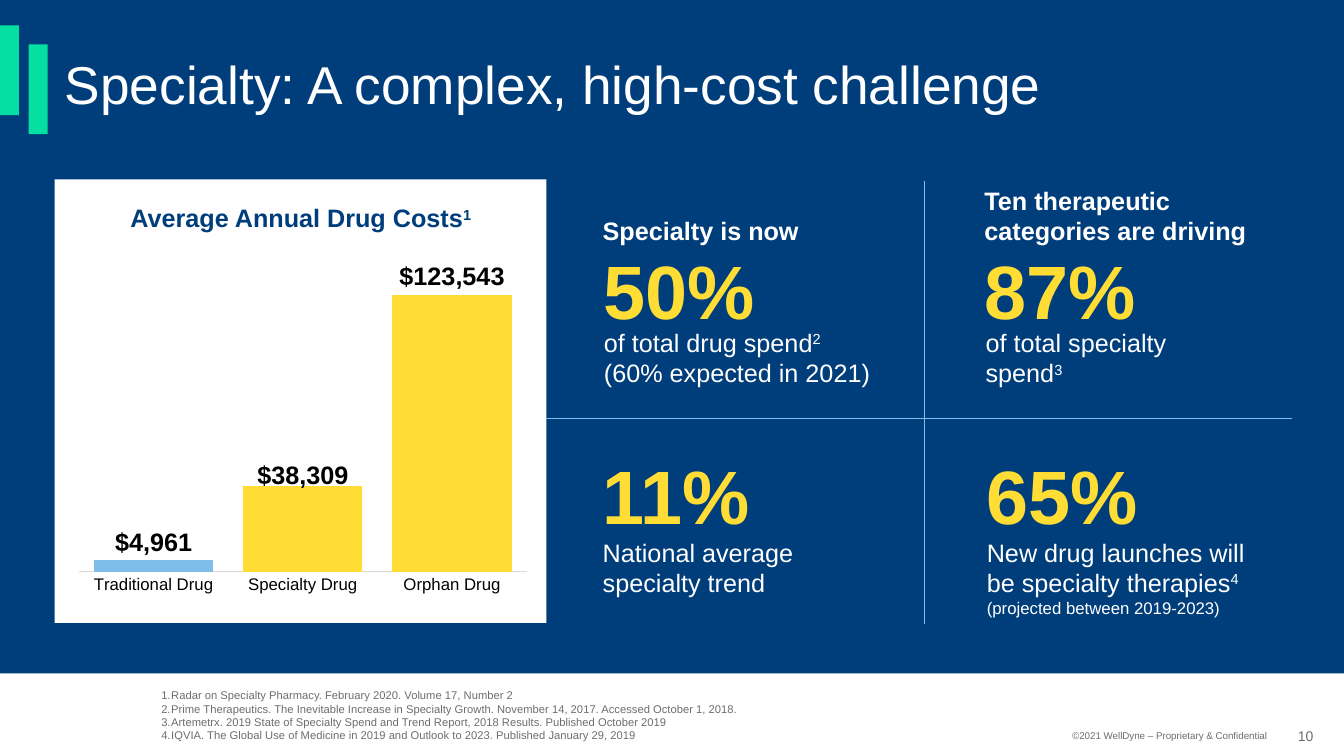
"""Build the slide on specialty drug costs."""
import dataclasses
import typing

import lxml.etree
import pptx
import pptx.chart.data
import pptx.dml.color
import pptx.enum.chart
import pptx.enum.shapes
import pptx.enum.text
import pptx.oxml
import pptx.oxml.ns
import pptx.util

Cm = pptx.util.Cm
Pt = pptx.util.Pt
Align = pptx.enum.text.PP_ALIGN
Anchor = pptx.enum.text.MSO_ANCHOR
COLORS = {"navy": "003E7B", "green": "05E0A2", "sky": "7FBEEB", "gold": "FFDD35",
          "white": "FFFFFF", "gray": "6B6E71", "black": "000000", "rule": "D9D9D9"}
MONEY = '"$"#,##0'
COSTS = {"Traditional Drug": 4961, "Specialty Drug": 38309, "Orphan Drug": 123543}
NOTES = (
    "Radar on Specialty Pharmacy. February 2020. Volume 17, Number 2",
    "Prime Therapeutics. The Inevitable Increase in Specialty Growth. "
    "November 14, 2017. Accessed October 1, 2018.",
    "Artemetrx. 2019 State of Specialty Spend and Trend Report, 2018 Results. "
    "Published October 2019",
    "IQVIA. The Global Use of Medicine in 2019 and Outlook to 2023. "
    "Published January 29, 2019",
)


@dataclasses.dataclass
class Area:
    left: float
    top: float
    width: float
    height: float

    def spans(self) -> list:
        return [Cm(n) for n in (self.left, self.top, self.width, self.height)]


@dataclasses.dataclass
class Block:
    area: Area
    color: str


@dataclasses.dataclass
class Line:
    text: str
    size: float = 18


@dataclasses.dataclass
class Label:
    area: Area
    lines: list[Line]
    color: str = "white"
    bold: bool = False
    anchor: typing.Any = Anchor.TOP
    align: typing.Any = Align.LEFT


BACK = Block(Area(0, 0, 33.87, 16.97), "navy")
BLOCKS = [
    Block(Area(0, 0.64, 0.48, 2.26), "green"),
    Block(Area(0.72, 1.12, 0.48, 2.26), "green"),
    Block(Area(1.38, 4.52, 12.39, 11.18), "white"),
]
RULES = [(23.29, 4.55, 23.29, 15.72), (32.56, 10.54, 13.77, 10.54)]
LABELS = [
    Label(Area(23.65, 18.03, 8.53, 1.02),
          [Line("©2021 WellDyne – Proprietary & Confidential", 7)],
          "gray", anchor=Anchor.MIDDLE, align=Align.RIGHT),
    Label(Area(32.46, 18.03, 1.14, 1.02), [Line("10", 10)], "gray", anchor=Anchor.MIDDLE),
    Label(Area(1.38, 4.67, 12.4, 1.63), [Line("Average Annual Drug Costs^1")],
          "navy", True, Anchor.MIDDLE, Align.CENTER),
    Label(Area(14.94, 5.3, 7.59, 1.02), [Line("Specialty is now")],
          bold=True, anchor=Anchor.BOTTOM),
    Label(Area(24.56, 4.52, 7.59, 1.8), [Line("Ten therapeutic categories are driving")],
          bold=True, anchor=Anchor.BOTTOM),
    Label(Area(14.97, 8.12, 7.44, 1.8),
          [Line("of total drug spend^2"), Line("(60% expected in 2021)")]),
    Label(Area(24.59, 8.12, 6.78, 1.8), [Line("of total specialty spend^3")]),
    Label(Area(14.94, 13.41, 7.26, 1.8), [Line("National average specialty trend")]),
    Label(Area(24.62, 13.41, 7.95, 2.39),
          [Line("New drug launches will"), Line("be specialty therapies^4"),
           Line("(projected between 2019-2023)", 12)]),
]
LABELS += [Label(Area(left, top, 7.7, 2.57), [Line(text, 54)], "gold", True)
           for left, top, text in ((14.97, 6.02, "50%"), (24.56, 6.02, "87%"),
                                   (14.94, 11.2, "11%"), (24.62, 11.2, "65%"))]


def put(item: typing.Any, form: dict) -> None:
    for name, value in form.items():
        setattr(item, name, value)


def tint(name: str) -> pptx.dml.color.RGBColor:
    return pptx.dml.color.RGBColor.from_string(COLORS[name])


def fill(part: typing.Any, color: str) -> None:
    part.fill.solid()
    part.fill.fore_color.rgb = tint(color)


def style(font: typing.Any, size: float, color: str, bold: bool = False) -> None:
    put(font, {"name": "Arial", "size": Pt(size), "bold": bold})
    font.color.rgb = tint(color)


def write(par: typing.Any, line: Line, color: str, bold: bool = False) -> None:
    for index, piece in enumerate(line.text.split("^")):
        run = par.add_run()
        run.text = piece
        style(run.font, line.size, color, bold)
        if index:
            run.font._element.set("baseline", "30000")


def place(shape: typing.Any, area: Area) -> None:
    put(shape, dict(zip(("left", "top", "width", "height"), area.spans())))


def draw_block(slide: typing.Any, block: Block) -> typing.Any:
    shape = slide.shapes.add_shape(pptx.enum.shapes.MSO_SHAPE.RECTANGLE, *block.area.spans())
    shape.shadow.inherit = False
    fill(shape, block.color)
    shape.line.fill.background()
    return shape


def draw_rule(slide: typing.Any, ends: tuple) -> None:
    rule = slide.shapes.add_connector(pptx.enum.shapes.MSO_CONNECTOR.STRAIGHT,
                                      *(Cm(n) for n in ends))
    rule.line.width = Pt(0.5)
    rule.line.color.rgb = tint("sky")
    lxml.etree.SubElement(rule._element.spPr, pptx.oxml.ns.qn("a:effectLst"))


def draw_label(slide: typing.Any, label: Label) -> None:
    frame = slide.shapes.add_textbox(*label.area.spans()).text_frame
    put(frame, {"word_wrap": True, "vertical_anchor": label.anchor})
    par = frame.paragraphs[0]
    par.alignment = label.align
    for index, line in enumerate(label.lines):
        if index:
            par.add_line_break()
        write(par, line, label.color, label.bold)


def draw_title(slide: typing.Any) -> None:
    title = slide.shapes.title
    place(title, Area(1.38, 1.35, 31.75, 2.26))
    put(title.text_frame, {"word_wrap": True, "vertical_anchor": Anchor.TOP,
                           "auto_size": pptx.enum.text.MSO_AUTO_SIZE.NONE})
    par = title.text_frame.paragraphs[0]
    put(par, {"alignment": Align.LEFT, "line_spacing": 0.9})
    write(par, Line("Specialty: A complex, high-cost challenge", 38), "white")


def draw_notes(slide: typing.Any) -> None:
    body = slide.placeholders[1]
    place(body, Area(3.81, 17.22, 21.13, 1.63))
    frame = body.text_frame
    put(frame, {"word_wrap": True, "vertical_anchor": Anchor.TOP,
                "auto_size": pptx.enum.text.MSO_AUTO_SIZE.NONE})
    for index, note in enumerate(NOTES):
        par = frame.add_paragraph() if index else frame.paragraphs[0]
        put(par, {"space_before": Pt(0), "alignment": Align.LEFT})
        props = par._p.get_or_add_pPr()
        props.set("marL", str(Cm(0.25)))
        props.set("indent", str(-Cm(0.25)))
        mark = lxml.etree.SubElement(props, pptx.oxml.ns.qn("a:buAutoNum"))
        mark.set("type", "arabicPeriod")
        write(par, Line(note, 8), "gray")


def layout(form: dict) -> typing.Any:
    space = pptx.oxml.ns.nsdecls("c")
    inner = "".join(f'<c:{tag} val="{value}"/>' for tag, value in form.items())
    return pptx.oxml.parse_xml(
        f"<c:layout {space}><c:manualLayout>{inner}</c:manualLayout></c:layout>")


def draw_chart(slide: typing.Any) -> None:
    kinds = pptx.enum.chart
    data = pptx.chart.data.CategoryChartData(number_format=MONEY)
    data.categories = list(COSTS)
    data.add_series("Series 1", list(COSTS.values()))
    chart = slide.shapes.add_chart(kinds.XL_CHART_TYPE.COLUMN_CLUSTERED,
                                   *Area(1.37, 6.02, 12.4, 9.53).spans(), data).chart
    put(chart, {"has_legend": False, "has_title": False})
    style(chart.font, 10, "black")
    put(chart.value_axis, {"visible": False, "has_major_gridlines": False,
                           "minimum_scale": 0, "maximum_scale": 125000, "major_unit": 25000})
    axis = chart.category_axis
    put(axis, {"major_tick_mark": kinds.XL_TICK_MARK.NONE, "has_major_gridlines": False})
    style(axis.tick_labels.font, 12, "black")
    axis.format.line.width = Pt(0.75)
    axis.format.line.color.rgb = tint("rule")
    plot = chart.plots[0]
    put(plot, {"gap_width": 25, "vary_by_categories": False})
    bars = plot.series[0]
    for index, color in enumerate(("sky", "gold", "gold")):
        fill(bars.points[index].format, color)
    tags = bars.data_labels
    put(tags, {"show_value": True, "number_format": MONEY, "number_format_is_linked": False,
               "position": kinds.XL_LABEL_POSITION.OUTSIDE_END})
    style(tags.font, 18, "black", True)
    tag = bars.points[1].data_label
    style(tag.font, 18, "black", True)
    tag.position = kinds.XL_LABEL_POSITION.OUTSIDE_END
    node = bars._element.find(".//" + pptx.oxml.ns.qn("c:dLbl"))
    node.insert(1, layout({"x": 0, "y": 0.02}))
    area = chart._chartSpace.find(".//" + pptx.oxml.ns.qn("c:plotArea"))
    for old in area.findall(pptx.oxml.ns.qn("c:layout")):
        area.remove(old)
    area.insert(0, layout({"layoutTarget": "inner", "xMode": "edge", "yMode": "edge",
                           "x": 0.05, "y": 0.14, "w": 0.91, "h": 0.74}))


def main() -> None:
    deck = pptx.Presentation()
    put(deck, {"slide_width": Cm(33.87), "slide_height": Cm(19.05)})
    slide = deck.slides.add_slide(deck.slide_layouts[1])
    slide.shapes._spTree.insert(2, draw_block(slide, BACK)._element)
    draw_title(slide)
    draw_notes(slide)
    for block in BLOCKS:
        draw_block(slide, block)
    for ends in RULES:
        draw_rule(slide, ends)
    draw_chart(slide)
    for label in LABELS:
        draw_label(slide, label)
    deck.save("out.pptx")


if __name__ == "__main__":
    main()
